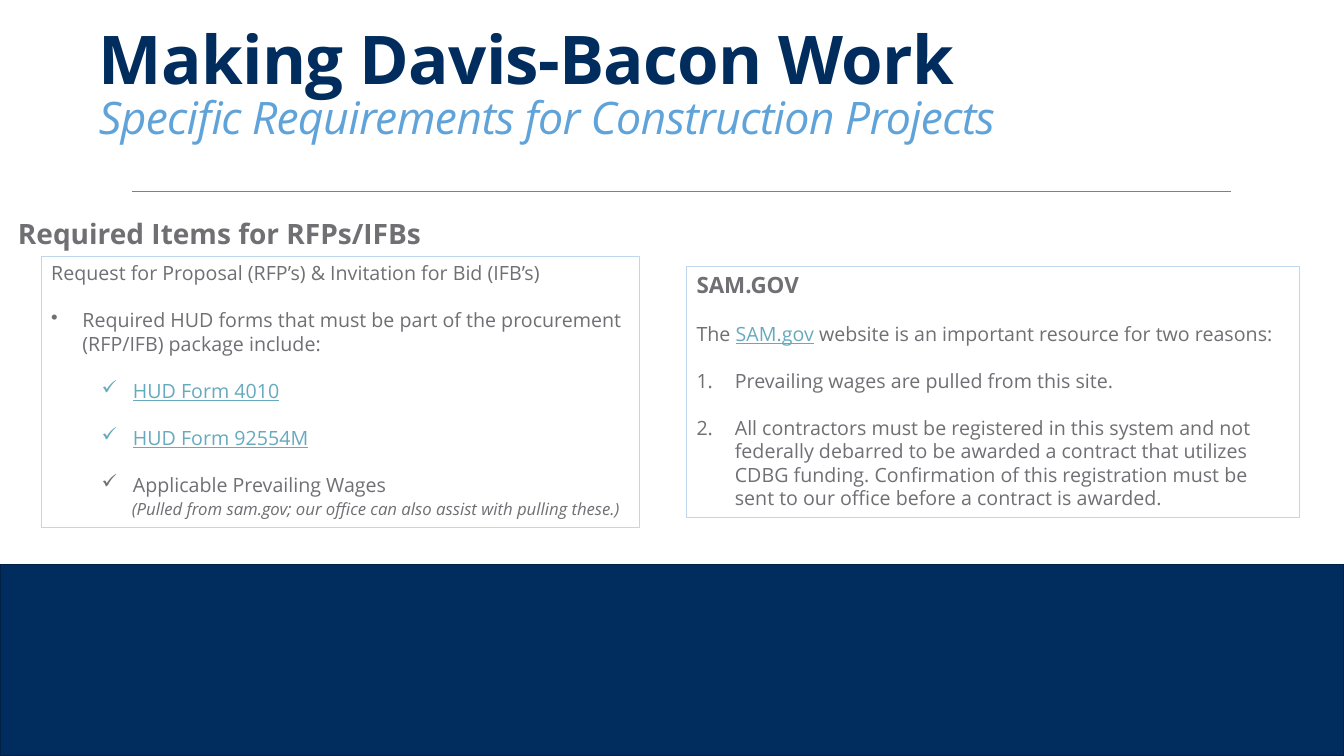
from lxml.etree import SubElement
from pptx import Presentation
from pptx.dml.color import RGBColor
from pptx.enum.shapes import MSO_CONNECTOR as Conn, MSO_SHAPE as Shape
from pptx.enum.text import MSO_ANCHOR as Anchor, MSO_AUTO_SIZE as Auto, PP_ALIGN as Align
from pptx.oxml.ns import qn
from pptx.util import Inches, Pt

# Content: a paragraph is (runs, format); a run is (text, format)
FONT, NAVY, SKY, GREY, TEAL, PALE = "Open Sans", "002D5D", "60A3D9", "6F6F74", "67AABF", "BFD7ED"
GAP = 16.8  # one line of body text, in points
LINK = dict(color=TEAL, line=True)
CHECK = dict(mark="✓", left=0.81, hang=0.31, gap=GAP)
NUM = dict(mark="1.", left=0.38, hang=0.38, gap=GAP)

TITLE = [([("Making Davis-Bacon Work", dict(size=48, color=NAVY, bold=True, track=-50, end=True)),
           ("Specific Requirements for Construction Projects",
            dict(size=32, color=SKY, italic=True, track=-50))], dict(lead=0.85))]
HEAD = [([("Required Items for RFPs/IFBs", dict(size=20, bold=True))], {})]
FORMS = [
    ([("Request for Proposal (RFP’s) & Invitation for Bid (IFB’s)", {})], {}),
    ([("Required HUD forms that must be part of the procurement (RFP/IFB) package include:", {})],
     dict(mark="•", left=0.31, hang=0.31, gap=GAP)),
    ([("HUD Form 4010", LINK)], dict(CHECK, tint=TEAL)),
    ([("HUD Form 92554M", LINK)], dict(CHECK, tint=TEAL)),
    ([("Applicable Prevailing Wages", {})], CHECK),
    ([("(Pulled from sam.gov; our office can also assist with pulling these.)",
       dict(size=12, italic=True))], dict(left=0.8, gap=2)),
]
SITE = [
    ([("SAM.GOV", dict(size=16, bold=True))], {}),
    ([("The ", {}), ("SAM.gov", LINK),
      (" website is an important resource for two reasons:", {})], dict(gap=GAP)),
    ([("Prevailing wages are pulled from this site.", {})], NUM),
    ([("All contractors must be registered in this system and not federally debarred to be "
       "awarded a contract that utilizes CDBG funding. Confirmation of this registration must "
       "be sent to our office before a contract is awarded.", {})], NUM),
]

# Places: left, top, width, height in inches
WIDE, HIGH = 13.33, 7.5
BAND_TOP = 5.6
PANELS = [((0.41, 2.54, 5.93, 2.69), FORMS), ((6.81, 2.64, 6.08, 2.49), SITE)]


def rgb(code):
    return RGBColor.from_string(code)


def add_run(para, text, size=14, color=GREY, bold=False, italic=False, line=False,
            track=0, end=False):
    run = para.add_run()
    run.text = text
    font = run.font
    font.name, font.size, font.bold, font.italic = FONT, Pt(size), bold, italic
    font.underline = line
    font.color.rgb = rgb(color)
    if track:
        run._r.get_or_add_rPr().set("spc", str(track))
    if end:
        para.add_line_break()


def set_para(para, lead=1.0, gap=0, left=0, hang=0, mark=None, tint=GREY):
    para.alignment = Align.LEFT
    para.line_spacing = lead
    para.space_before, para.space_after = Pt(gap), Pt(0)
    props = para._p.get_or_add_pPr()
    props.set("marL", str(Inches(left)))
    props.set("indent", str(-Inches(hang)))
    if not mark:
        SubElement(props, qn("a:buNone"))
        return
    SubElement(SubElement(props, qn("a:buClr")), qn("a:srgbClr")).set("val", tint)
    if mark == "1.":
        SubElement(props, qn("a:buAutoNum")).set("type", "arabicPeriod")
    else:
        SubElement(props, qn("a:buChar")).set("char", mark)


def write(shape, paras, anchor=Anchor.TOP):
    frame = shape.text_frame
    frame.word_wrap, frame.auto_size = True, Auto.NONE
    frame.vertical_anchor = anchor
    for i, (runs, form) in enumerate(paras):
        para = frame.add_paragraph() if i else frame.paragraphs[0]
        set_para(para, **form)
        for text, look in runs:
            add_run(para, text, **look)


def add_box(slide, spot, line, width, fill=None):
    box = slide.shapes.add_shape(Shape.RECTANGLE, *map(Inches, spot))
    box.shadow.inherit = False
    if fill:
        box.fill.solid()
        box.fill.fore_color.rgb = rgb(fill)
    else:
        box.fill.background()
    box.line.color.rgb, box.line.width = rgb(line), Pt(width)
    return box


def main():
    deck = Presentation()
    deck.slide_width, deck.slide_height = Inches(WIDE), Inches(HIGH)
    slide = deck.slides.add_slide(deck.slide_layouts[5])

    # Title
    title = slide.shapes.title
    title.left, title.top, title.width, title.height = map(Inches, (0.88, 0.1, 11.86, 1.38))
    write(title, TITLE, Anchor.BOTTOM)

    # Rule under the title
    rule = slide.shapes.add_connector(Conn.STRAIGHT, *map(Inches, (1.31, 1.9, 12.21, 1.9)))
    rule.line.color.rgb, rule.line.width = rgb("808080"), Pt(0.5)
    SubElement(rule._element.spPr, qn("a:effectLst"))

    # Bottom band
    add_box(slide, (0, BAND_TOP, WIDE, HIGH - BAND_TOP), "002145", 1.25, NAVY)

    # Heading and panels
    write(slide.shapes.add_textbox(*map(Inches, (0.08, 2.1, 9.17, 0.44))), HEAD)
    for spot, paras in PANELS:
        write(add_box(slide, spot, PALE, 0.75), paras)

    deck.save("out.pptx")


if __name__ == "__main__":
    main()
